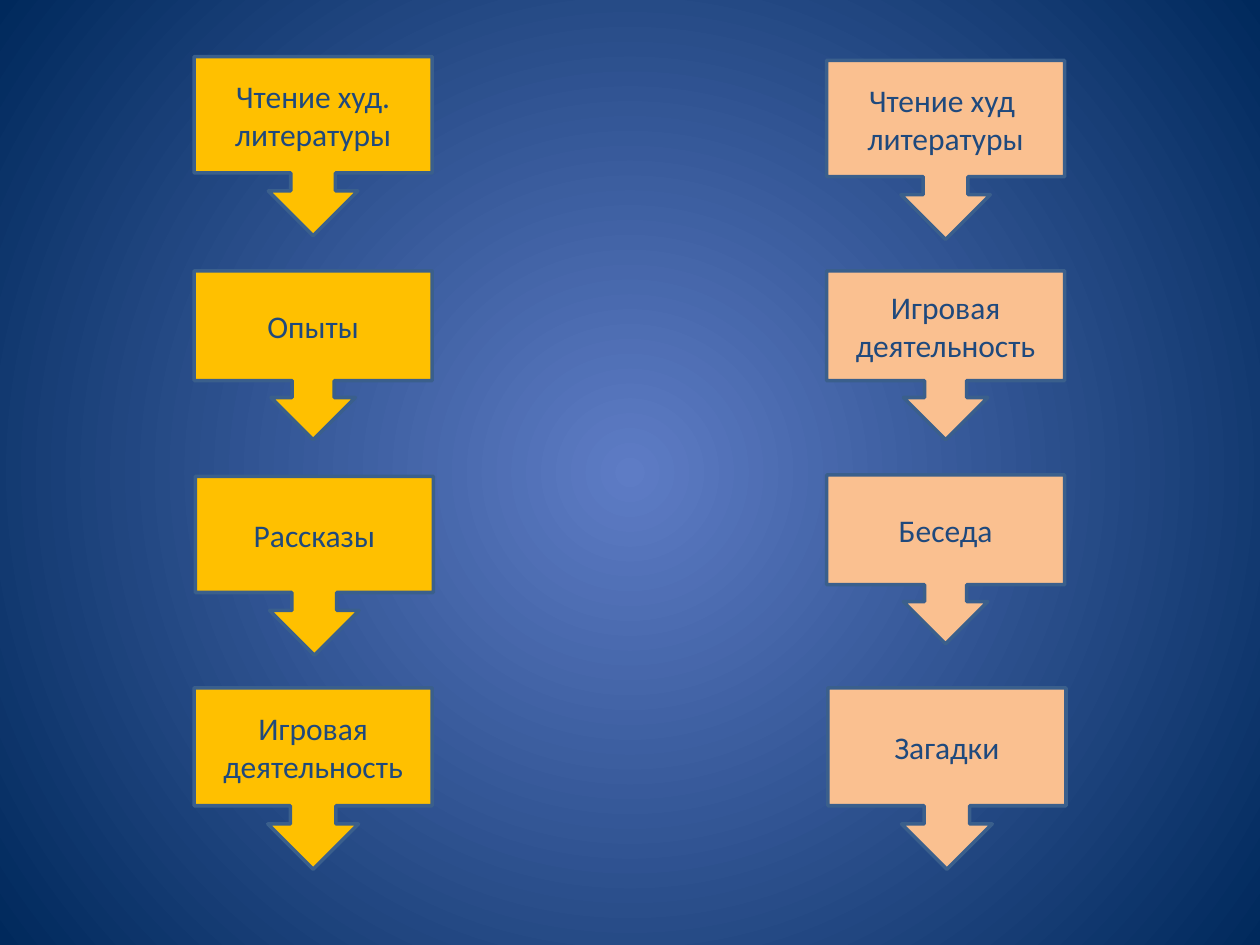
from lxml import etree
from pptx import Presentation
from pptx.dml.color import RGBColor
from pptx.enum.shapes import MSO_SHAPE
from pptx.enum.text import MSO_ANCHOR, PP_ALIGN
from pptx.oxml.ns import qn
from pptx.util import Inches, Pt

CALLOUT = MSO_SHAPE.DOWN_ARROW_CALLOUT
MIDDLE = MSO_ANCHOR.MIDDLE
CENTER = PP_ALIGN.CENTER

GOLD = RGBColor(0xFF, 0xC0, 0x00)
PEACH = RGBColor(0xFA, 0xC0, 0x90)
EDGE = RGBColor(0x3A, 0x5F, 0x8C)
INK = RGBColor(0x1F, 0x49, 0x7D)
GLOW = RGBColor(0x5E, 0x7C, 0xC5)
NIGHT = RGBColor(0x00, 0x29, 0x5C)

WIDTH = 1.89

# Each step: text, left, top, height
GOLD_STEPS = [
    ("Чтение худ. литературы", 1.54, 0.45, 1.42),
    ("Опыты", 1.54, 2.15, 1.34),
    ("Рассказы", 1.55, 3.78, 1.42),
    ("Игровая деятельность", 1.54, 5.46, 1.44),
]
PEACH_STEPS = [
    ("Чтение худ \nлитературы", 6.56, 0.48, 1.42),
    ("Игровая деятельность", 6.56, 2.15, 1.34),
    ("Беседа", 6.56, 3.77, 1.34),
    ("Загадки", 6.57, 5.46, 1.44),
]


def paint_back(slide):
    """Fill the background with a round glow from the centre."""
    fill = slide.background.fill
    fill.gradient()
    for stop, color, place in zip(fill.gradient_stops, (GLOW, NIGHT), (0, 1)):
        stop.color.rgb = color
        stop.position = place
    grad = slide.element.find(".//" + qn("a:gradFill"))
    lin = grad.find(qn("a:lin"))
    circle = etree.Element(qn("a:path"), path="circle")
    etree.SubElement(circle, qn("a:fillToRect"),
                     {side: "50000" for side in "ltrb"})
    grad.replace(lin, circle)


def add_step(slide, color, text, left, top, height):
    """Add one callout whose arrow points to the next step."""
    box = slide.shapes.add_shape(CALLOUT, Inches(left), Inches(top),
                                 Inches(WIDTH), Inches(height))
    box.shadow.inherit = False
    box.fill.solid()
    box.fill.fore_color.rgb = color
    box.line.color.rgb = EDGE
    box.line.width = Pt(2)
    frame = box.text_frame
    frame.word_wrap = True
    frame.vertical_anchor = MIDDLE
    frame.text = text
    for para in frame.paragraphs:
        para.alignment = CENTER
        for run in para.runs:
            run.font.name = "Calibri"
            run.font.size = Pt(18)
            run.font.color.rgb = INK


def main():
    deck = Presentation()
    deck.slide_width, deck.slide_height = Inches(10), Inches(7.5)
    slide = deck.slides.add_slide(deck.slide_layouts[6])
    paint_back(slide)

    # Left and right chains of steps
    for color, steps in ((GOLD, GOLD_STEPS), (PEACH, PEACH_STEPS)):
        for step in steps:
            add_step(slide, color, *step)

    deck.save("out.pptx")


if __name__ == "__main__":
    main()
